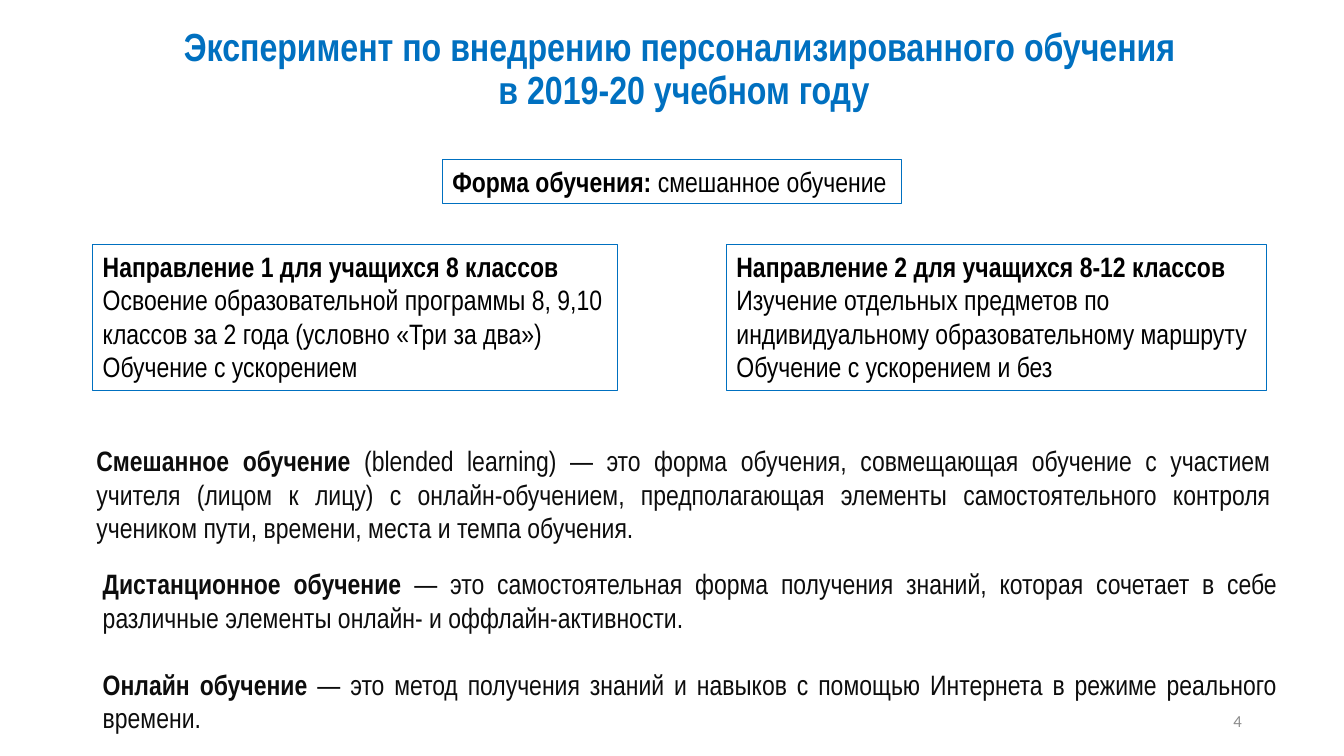
from pptx import Presentation
from pptx.dml.color import RGBColor
from pptx.enum import shapes, text
from pptx.util import Cm, Pt

COLORS = {"blue": "0070C0", "black": "000000", "body": "0D0D0D", "number": "8C8C8C"}
ALIGN = text.PP_ALIGN

prs = Presentation()
prs.slide_width, prs.slide_height = Cm(33.87), Cm(19.05)
s = prs.slides.add_slide(prs.slide_layouts[6])


def add_text(box, paragraphs, color, size=20, font="Arial Narrow", align=ALIGN.LEFT,
             framed=False, wrap=True, **spacing):
    """Add a text box; paragraphs hold (text, bold) runs, and framed draws a blue outline."""
    at = [Cm(v) for v in box]
    if framed:
        sp = s.shapes.add_shape(shapes.MSO_SHAPE.RECTANGLE, *at)
        sp.shadow.inherit = False
        sp.fill.background()
        sp.line.color.rgb = RGBColor.from_string(COLORS["blue"])
        sp.line.width = Pt(0.75)
    else:
        sp = s.shapes.add_textbox(*at)
    tf = sp.text_frame
    tf.word_wrap = wrap
    tf.vertical_anchor = text.MSO_ANCHOR.TOP
    for i, runs in enumerate(paragraphs):
        p = tf.add_paragraph() if i else tf.paragraphs[0]
        p.alignment = align
        p.line_spacing = spacing.get("line")
        if i and "before" in spacing:
            p.space_before = Pt(spacing["before"])
        for words, bold in runs:
            r = p.add_run()
            r.text = words
            r.font.name, r.font.size, r.font.bold = font, Pt(size), bold
            r.font.color.rgb = RGBColor.from_string(COLORS[color])
    return tf


add_text((2.49, 0.58, 29.49, 2.41), [
    [("Эксперимент по внедрению персонализированного обучения ", True)],
    [("в 2019-20 учебном году", True)],
], "blue", size=28, align=ALIGN.CENTER, line=0.9)

add_text((11.15, 4.02, 11.56, 1.11), [
    [("Форма обучения: ", True), ("смешанное обучение", False)],
], "black", framed=True, wrap=False)

directions = [
    (2.34, 13.23, [
        [("Направление 1 для учащихся 8 классов", True)],
        [("Освоение образовательной программы 8, 9,10 классов за 2 года "
          "(условно «Три за два»)", False)],
        [("Обучение с ускорением", False)],
    ]),
    (18.31, 13.61, [
        [("Направление 2 для учащихся 8-12 классов", True)],
        [("Изучение отдельных предметов по индивидуальному образовательному маршруту "
          "Обучение с ускорением и без", False)],
    ]),
]
for left, width, paragraphs in directions:
    add_text((left, 6.15, width, 3.68), paragraphs, "black", framed=True)

definitions = [
    (2.18, 11.05, 3.58, [
        [("Смешанное обучение ", True),
         ("(blended learning) — это форма обучения, совмещающая обучение с участием учителя "
          "(лицом к лицу) с онлайн-обучением, предполагающая элементы самостоятельного "
          "контроля учеником пути, времени, места и темпа обучения.", False)],
    ]),
    (2.34, 14.15, 4.52, [
        [("Дистанционное обучение ", True),
         ("— это самостоятельная форма получения знаний, которая сочетает в себе различные "
          "элементы онлайн- и оффлайн-активности.", False)],
        [("Онлайн обучение ", True),
         ("— это метод получения знаний и навыков с помощью Интернета в режиме реального "
          "времени.", False)],
    ]),
]
for left, top, height, paragraphs in definitions:
    add_text((left, top, 30.1, height), paragraphs, "body", align=ALIGN.JUSTIFY, before=24)

tf = add_text((23.93, 17.65, 7.62, 1.02), [[("4", False)]], "number", size=12,
              font="Calibri", align=ALIGN.RIGHT)
tf.vertical_anchor = text.MSO_ANCHOR.MIDDLE

prs.save("out.pptx")
